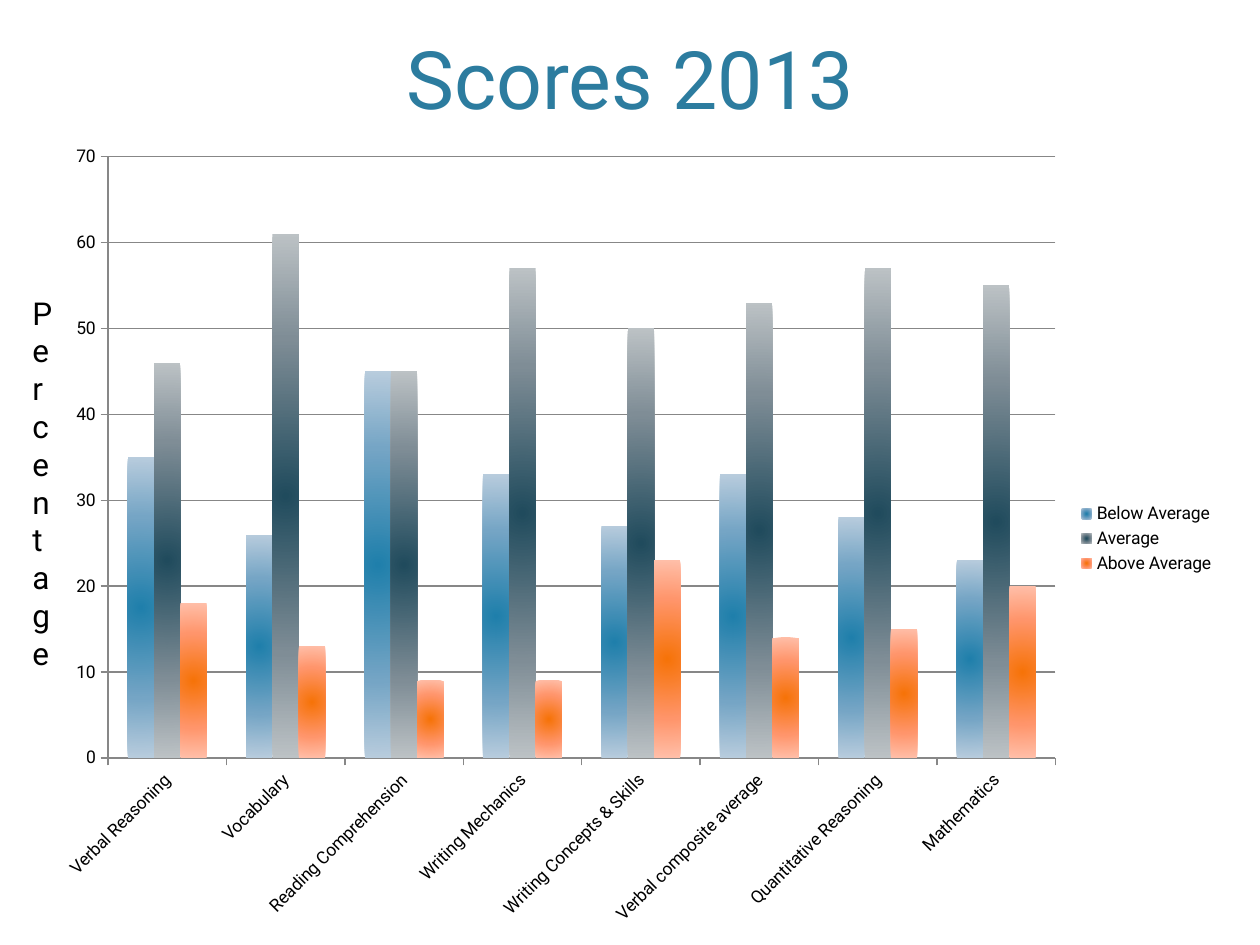
from dataclasses import dataclass

from lxml import etree
from pptx import Presentation
from pptx.chart.data import CategoryChartData
from pptx.dml.color import RGBColor
from pptx.enum.chart import XL_CHART_TYPE, XL_LEGEND_POSITION, XL_TICK_MARK
from pptx.enum.text import MSO_ANCHOR, PP_ALIGN
from pptx.oxml import parse_xml
from pptx.oxml.ns import nsdecls, qn
from pptx.util import Pt

COLUMNS = XL_CHART_TYPE.COLUMN_CLUSTERED
RIGHT = XL_LEGEND_POSITION.RIGHT
OUT, NONE = XL_TICK_MARK.OUTSIDE, XL_TICK_MARK.NONE
TOP, BOTTOM = MSO_ANCHOR.TOP, MSO_ANCHOR.BOTTOM
LEFT, CENTER = PP_ALIGN.LEFT, PP_ALIGN.CENTER


@dataclass(frozen=True)
class Theme:
    font: str = "Roboto"
    title: str = "2C7C9F"
    ink: str = "000000"
    line: str = "878787"
    fills: tuple = (
        ("1F7FAB", "75A5C5", "B8CCDD"),
        ("204B5D", "7F8D96", "BCC2C5"),
        ("F67308", "FF956B", "FFBFA9"),
    )
    big: int = 46
    mid: int = 18
    small: int = 10


TESTS = {
    "Verbal Reasoning": (35, 46, 18),
    "Vocabulary": (26, 61, 13),
    "Reading Comprehension": (45, 45, 9),
    "Writing Mechanics": (33, 57, 9),
    "Writing Concepts & Skills": (27, 50, 23),
    "Verbal composite average": (33, 53, 14),
    "Quantitative Reasoning": (28, 57, 15),
    "Mathematics": (23, 55, 20),
}
LEVELS = ("Below Average", "Average", "Above Average")
PLOT = {"x": 0.055, "y": 0.03, "w": 0.8, "h": 0.74}


class Deck:
    def __init__(self, theme):
        self.theme = theme
        self.file = Presentation()
        self.file.slide_width, self.file.slide_height = Pt(720), Pt(540)
        self.slide = self.file.slides.add_slide(self.file.slide_layouts[6])

    def style(self, font, size, color):
        font.name, font.size = self.theme.font, Pt(size)
        font.color.rgb = RGBColor.from_string(color)

    def text(self, box, words, size, color, align=LEFT, anchor=TOP):
        frame = self.slide.shapes.add_textbox(*map(Pt, box)).text_frame
        frame.word_wrap = True
        frame.vertical_anchor = anchor
        para = frame.paragraphs[0]
        para.alignment = align
        run = para.add_run()
        run.text = words
        self.style(run.font, size, color)

    def chart(self, box, names, rows):
        data = CategoryChartData()
        data.categories = list(rows)
        for name, vals in zip(names, zip(*rows.values())):
            data.add_series(name, vals)
        frame = self.slide.shapes.add_chart(COLUMNS, *map(Pt, box), data)
        chart = frame.chart
        chart.has_title = False
        self.style(chart.font, self.theme.small, self.theme.ink)
        chart.has_legend = True
        chart.legend.position = RIGHT
        chart.legend.include_in_layout = False
        self.axes(chart)
        self.place(chart)
        plot = chart.plots[0]
        plot.gap_width, plot.overlap = 150, 0
        plot.vary_by_categories = False
        for row, fill in zip(plot.series, self.theme.fills):
            row.invert_if_negative = False
            self.glow(row.format, fill)

    def axes(self, chart):
        cat, val = chart.category_axis, chart.value_axis
        val.minimum_scale, val.maximum_scale, val.major_unit = 0, 70, 10
        val.has_major_gridlines = True
        for axis in (cat, val):
            axis.major_tick_mark, axis.minor_tick_mark = OUT, NONE
            self.style(axis.tick_labels.font, self.theme.small, self.theme.ink)
        for part in (cat, val, val.major_gridlines):
            part.format.line.width = Pt(0.75)
            part.format.line.color.rgb = RGBColor.from_string(self.theme.line)
        body = cat.format.line and cat._element.find(qn("c:txPr")).find(qn("a:bodyPr"))
        body.set("rot", "-2700000")
        body.set("vert", "horz")

    def place(self, chart):
        area = chart._chartSpace.chart.plotArea
        old = area.find(qn("c:layout"))
        if old is not None:
            area.remove(old)
        layout = etree.Element(qn("c:layout"))
        manual = etree.SubElement(layout, qn("c:manualLayout"))
        modes = {"layoutTarget": "inner", "xMode": "edge", "yMode": "edge"}
        for tag, val in {**modes, **PLOT}.items():
            etree.SubElement(manual, qn("c:" + tag)).set("val", str(val))
        area.insert(0, layout)

    def glow(self, form, colors):
        form.fill.solid()
        stops = "".join(
            f'<a:gs pos="{pos}"><a:srgbClr val="{color}"/></a:gs>'
            for pos, color in zip((0, 60000, 100000), colors)
        )
        grad = parse_xml(
            f'<a:gradFill {nsdecls("a")} rotWithShape="1"><a:gsLst>{stops}</a:gsLst>'
            '<a:path path="circle"><a:fillToRect l="50000" t="50000" r="50000" b="50000"/>'
            "</a:path></a:gradFill>"
        )
        solid = form._element.spPr.find(qn("a:solidFill"))
        solid.getparent().replace(solid, grad)


def main():
    theme = Theme()
    deck = Deck(theme)
    deck.text((43.2, 8.6, 633.6, 67), "Scores 2013", theme.big, theme.title, CENTER, BOTTOM)
    deck.chart((24.5, 75.6, 676.8, 464.4), LEVELS, TESTS)
    deck.text((11.5, 164.2, 26.6, 225.4), "Percentage", theme.mid, theme.ink)
    deck.file.save("out.pptx")


if __name__ == "__main__":
    main()
